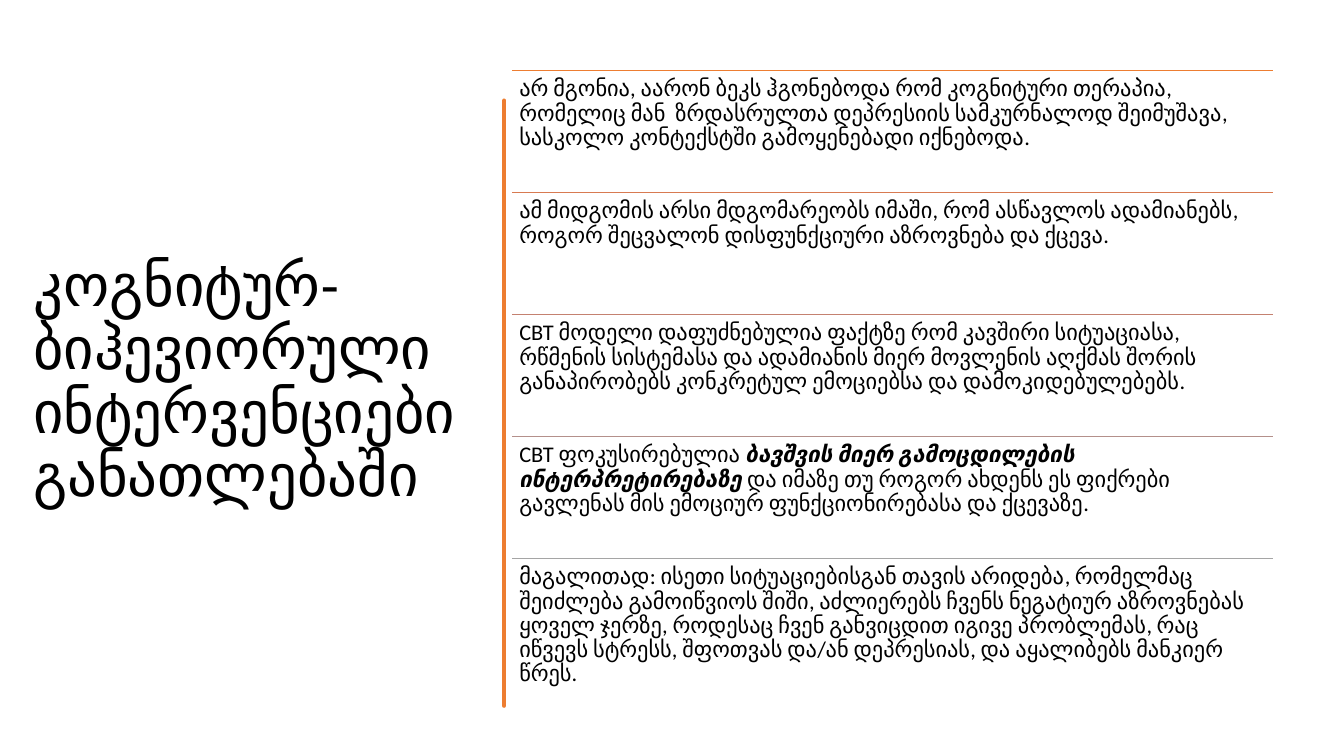
from lxml import etree
from pptx import Presentation
from pptx import util as u
from pptx.dml import color
from pptx.enum import shapes, text
from pptx.oxml import ns

TITLE = "კოგნიტურ-ბიჰევიორული ინტერვენციები განათლებაში"
ROWS = [
    ("ED7D31", ["არ მგონია, აარონ ბეკს ჰგონებოდა რომ კოგნიტური თერაპია, რომელიც მან  ზრდასრულთა "
                "დეპრესიის სამკურნალოდ შეიმუშავა, სასკოლო კონტექსტში გამოყენებადი იქნებოდა."]),
    ("D87A51", ["ამ მიდგომის არსი მდგომარეობს იმაში, რომ ასწავლოს ადამიანებს, "
                "როგორ შეცვალონ დისფუნქციური აზროვნება და ქცევა."]),
    ("C48170", ["CBT მოდელი დაფუძნებულია ფაქტზე რომ კავშირი სიტუაციასა, რწმენის სისტემასა და ადამიანის "
                "მიერ მოვლენის აღქმას შორის განაპირობებს კონკრეტულ ემოციებსა და დამოკიდებულებებს."]),
    ("B4908B", ["CBT ფოკუსირებულია ",
                "ბავშვის მიერ გამოცდილების ინტერპრეტირებაზე ",
                "და იმაზე თუ როგორ ახდენს ეს ფიქრები გავლენას მის ემოციურ ფუნქციონირებასა და ქცევაზე."]),
    ("A5A5A5", ["მაგალითად: ისეთი სიტუაციებისგან თავის არიდება, რომელმაც შეიძლება გამოიწვიოს შიში, "
                "აძლიერებს ჩვენს ნეგატიურ აზროვნებას ყოველ ჯერზე, როდესაც ჩვენ განვიცდით იგივე პრობლემას, "
                "რაც იწვევს სტრესს, შფოთვას და/ან დეპრესიას, და აყალიბებს მანკიერ წრეს."]),
]
RIGHT = [(0.02, 0), (0.03, 0.3), (0.02, 0.62), (0.01, 1.02), (0.02, 1.42), (0.02, 2.1),
         (0.03, 2.4), (0.02, 2.72), (0.04, 3.1), (0.02, 3.52), (0, 3.9), (0.02, 4.26),
         (0.04, 4.62), (0.02, 5), (0.02, 5.92)]
LEFT = [(0, 5.92), (-0.01, 5.6), (0, 5.29), (0.01, 5), (0, 4.73), (0, 3.93), (-0.01, 3.6),
        (0, 3.31), (0, 2.51), (0, 1.66), (0.01, 1.3), (-0.01, 0.97), (0.01, 0.5), (0, 0)]


def paint(hue):
    """Return the colour of a hex string."""
    return color.RGBColor.from_string(hue)


def write(shape, parts, size, hue="000000", inset=0.1, anchor=text.MSO_ANCHOR.TOP):
    """Fill a shape with one paragraph; every second part is bold italic."""
    frame = shape.text_frame
    frame.word_wrap = True
    frame.auto_size = text.MSO_AUTO_SIZE.NONE
    frame.vertical_anchor = anchor
    frame.margin_left = frame.margin_right = u.Inches(inset)
    frame.margin_top = frame.margin_bottom = u.Inches(min(inset, 0.07))
    para = frame.paragraphs[0]
    para.alignment = text.PP_ALIGN.LEFT
    para.line_spacing = 0.9
    for i, part in enumerate(parts):
        run = para.add_run()
        run.text = part
        run.font.name = "Calibri"
        run.font.size = u.Pt(size)
        run.font.color.rgb = paint(hue)
        run.font.bold = run.font.italic = i % 2 == 1


def head(slide, x, y, w, h):
    """Place the title in its box."""
    title = slide.shapes.title
    title.left, title.top, title.width, title.height = map(u.Inches, (x, y, w, h))
    write(title, [TITLE], 42, anchor=text.MSO_ANCHOR.MIDDLE)


def brush(slide, x, y, hue="ED7D31"):
    """Draw the hand-drawn upright bar from its top left corner."""
    pts = [(x + dx, y + dy) for dx, dy in RIGHT + LEFT]
    form = slide.shapes.build_freeform(*pts[0], scale=u.Inches(1))
    form.add_line_segments(pts[1:], close=True)
    bar = form.convert_to_shape()
    bar.shadow.inherit = False
    bar.fill.solid()
    bar.fill.fore_color.rgb = paint(hue)
    bar.line.color.rgb = paint(hue)
    bar.line.width = u.Pt(3.25)
    etree.SubElement(bar.line._get_or_add_ln(), ns.qn("a:round"))


def rule(slide, x, y, w, hue):
    """Draw a thin level line."""
    line = slide.shapes.add_connector(
        shapes.MSO_CONNECTOR.STRAIGHT, *map(u.Inches, (x, y, x + w, y)))
    line.line.color.rgb = paint(hue)
    line.line.width = u.Pt(1)
    etree.SubElement(line._element.spPr, ns.qn("a:effectLst"))


def points(slide, x, y, w, h):
    """Stack the ruled paragraphs evenly in the box."""
    step = h / len(ROWS)
    for i, (hue, parts) in enumerate(ROWS):
        top = y + i * step
        rule(slide, x, top, w, hue)
        box = slide.shapes.add_textbox(*map(u.Inches, (x, top, w, step)))
        write(box, parts, 16, inset=0.07)


def main():
    """Build and save the slide."""
    deck = Presentation()
    deck.slide_width, deck.slide_height = u.Inches(13.33), u.Inches(7.5)
    slide = deck.slides.add_slide(deck.slide_layouts[5])
    head(slide, 0.23, 0.74, 4.62, 6.11)
    brush(slide, 4.73, 0.84)
    points(slide, 5.08, 0.7, 7.55, 6.05)
    deck.save("out.pptx")


if __name__ == "__main__":
    main()
